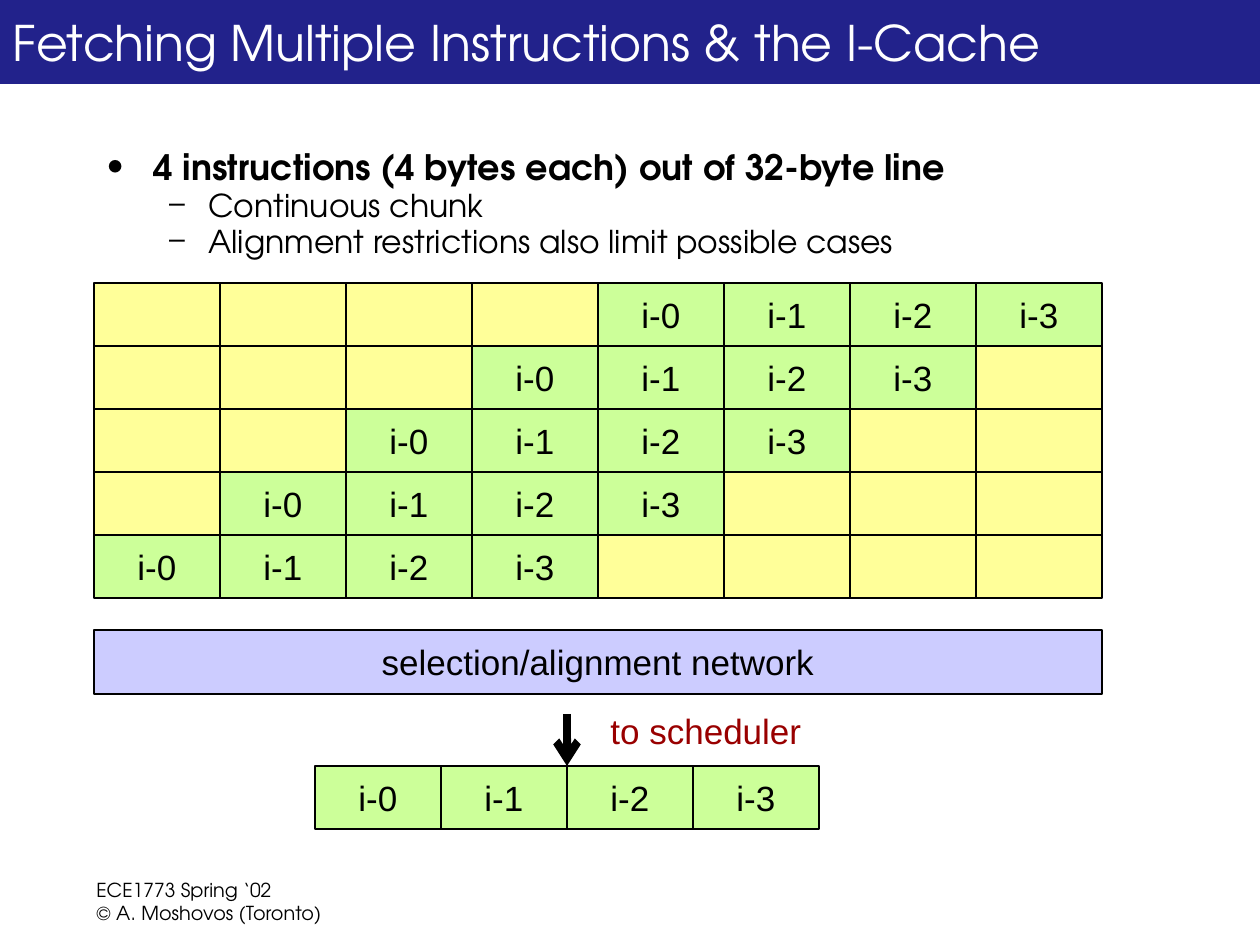
from lxml import etree
from pptx import Presentation, util as u
from pptx.dml.color import RGBColor
from pptx.enum import shapes, text
from pptx.oxml.ns import qn

# Content
TITLE = "Fetching Multiple Instructions & the I-Cache"
# wording, size, bold, bullet, left margin px, hanging indent px
BULLETS = [
    ("4 instructions (4 bytes each) out of 32-byte line", 20, True, "•", 47, 47),
    ("Continuous chunk", 18, False, "–", 102, 39),
    ("Alignment restrictions also limit possible cases", 18, False, "–", 102, 39),
]
INSTRUCTIONS = ["i-0", "i-1", "i-2", "i-3"]
FIRST_SLOTS = [4, 3, 2, 1, 0]  # where the fetched chunk starts in each line
SLOTS_PER_LINE = 8
NETWORK = "selection/alignment network"
DESTINATION = "to scheduler"
FOOTER = ["ECE1773 Spring ‘02", "© A. Moshovos (Toronto)"]

COLORS = {
    "banner": "22228B", "white": "FFFFFF", "black": "000000", "unused": "FFFF99",
    "fetched": "CCFF99", "network": "CCCCFF", "destination": "990000",
}
HEADING_FONT, DIAGRAM_FONT = "TeX Gyre Adventor", "Arial"
LEFT, GRID_TOP, SLOT_W, SLOT_H = 94, 283, 126, 63
ARROW_X, ISSUE_TOP = 567, 766


def px(n):
    return u.Emu(round(n * 914400 / 126))


def color(name):
    return RGBColor.from_string(COLORS[name])


def add_run(paragraph, wording, size, font, ink="black", bold=False):
    run = paragraph.add_run()
    run.text = wording
    run.font.size = u.Pt(size)
    run.font.name = font
    run.font.bold = bold
    run.font.color.rgb = color(ink)


def add_box(slide, x, y, w, h, fill, outlined=True):
    box = slide.shapes.add_shape(shapes.MSO_SHAPE.RECTANGLE, px(x), px(y), px(w), px(h))
    box.shadow.inherit = False
    box.fill.solid()
    box.fill.fore_color.rgb = color(fill)
    if outlined:
        box.line.color.rgb = color("black")
        box.line.width = u.Pt(0.75)
    else:
        box.line.fill.background()
    box.text_frame.vertical_anchor = text.MSO_ANCHOR.MIDDLE
    return box


def add_label(box, wording):
    paragraph = box.text_frame.paragraphs[0]
    paragraph.alignment = text.PP_ALIGN.CENTER
    add_run(paragraph, wording, 20, DIAGRAM_FONT)


def add_text(slide, x, y, w, h, count=1):
    frame = slide.shapes.add_textbox(px(x), px(y), px(w), px(h)).text_frame
    frame.word_wrap = True
    for _ in range(count - 1):
        frame.add_paragraph()
    return frame.paragraphs


def set_bullet(paragraph, mark, margin, hanging):
    props = paragraph._p.get_or_add_pPr()
    props.set("marL", str(px(margin)))
    props.set("indent", str(-px(hanging)))
    etree.SubElement(props, qn("a:buFont")).set("typeface", HEADING_FONT)
    etree.SubElement(props, qn("a:buChar")).set("char", mark)


def add_arrow(slide, x, top, bottom):
    arrow = slide.shapes.add_connector(
        shapes.MSO_CONNECTOR.STRAIGHT, px(x), px(top), px(x), px(bottom))
    arrow.line.color.rgb = color("black")
    arrow.line.width = u.Pt(4.5)
    etree.SubElement(arrow.line._get_or_add_ln(), qn("a:tailEnd")).set("type", "arrow")
    etree.SubElement(arrow._element.spPr, qn("a:effectLst"))


def main():
    deck = Presentation()
    deck.slide_width, deck.slide_height = px(1260), px(945)
    slide = deck.slides.add_slide(deck.slide_layouts[6])

    # Footer
    for paragraph, wording in zip(add_text(slide, 84, 872, 262, 53, len(FOOTER)), FOOTER):
        add_run(paragraph, wording, 11, HEADING_FONT)

    # Title banner
    banner = add_box(slide, 0, 0, 1260, 84, "banner", outlined=False)
    heading = banner.text_frame.paragraphs[0]
    heading.alignment = text.PP_ALIGN.LEFT
    add_run(heading, TITLE, 28, HEADING_FONT, "white")

    # Bullets
    points = add_text(slide, LEFT, 147, 1071, 126, len(BULLETS))
    for paragraph, (wording, size, bold, mark, margin, hanging) in zip(points, BULLETS):
        paragraph.level = 0 if bold else 1
        paragraph.line_spacing = 0.8
        paragraph.space_before = u.Pt(size * 0.2)
        set_bullet(paragraph, mark, margin, hanging)
        add_run(paragraph, wording, size, HEADING_FONT, bold=bold)

    # Cache lines, each with its possible chunk
    for row, first in enumerate(FIRST_SLOTS):
        for slot in range(SLOTS_PER_LINE):
            fetched = first <= slot < first + len(INSTRUCTIONS)
            box = add_box(slide, LEFT + slot * SLOT_W, GRID_TOP + row * SLOT_H,
                          SLOT_W, SLOT_H, "fetched" if fetched else "unused")
            if fetched:
                add_label(box, INSTRUCTIONS[slot - first])

    # Selection network
    network = add_box(slide, LEFT, 630, SLOTS_PER_LINE * SLOT_W, 64, "network")
    add_label(network, NETWORK)

    # Way to the scheduler
    add_arrow(slide, ARROW_X, 714, ISSUE_TOP)
    destination = add_text(slide, 598, 703, 255, 63)[0]
    add_run(destination, DESTINATION, 20, DIAGRAM_FONT, "destination")

    # Aligned instructions, centred under the arrow
    issue_left = ARROW_X - len(INSTRUCTIONS) * SLOT_W // 2
    for i, name in enumerate(INSTRUCTIONS):
        add_label(add_box(slide, issue_left + i * SLOT_W, ISSUE_TOP, SLOT_W, SLOT_H, "fetched"), name)

    deck.save("out.pptx")


if __name__ == "__main__":
    main()
